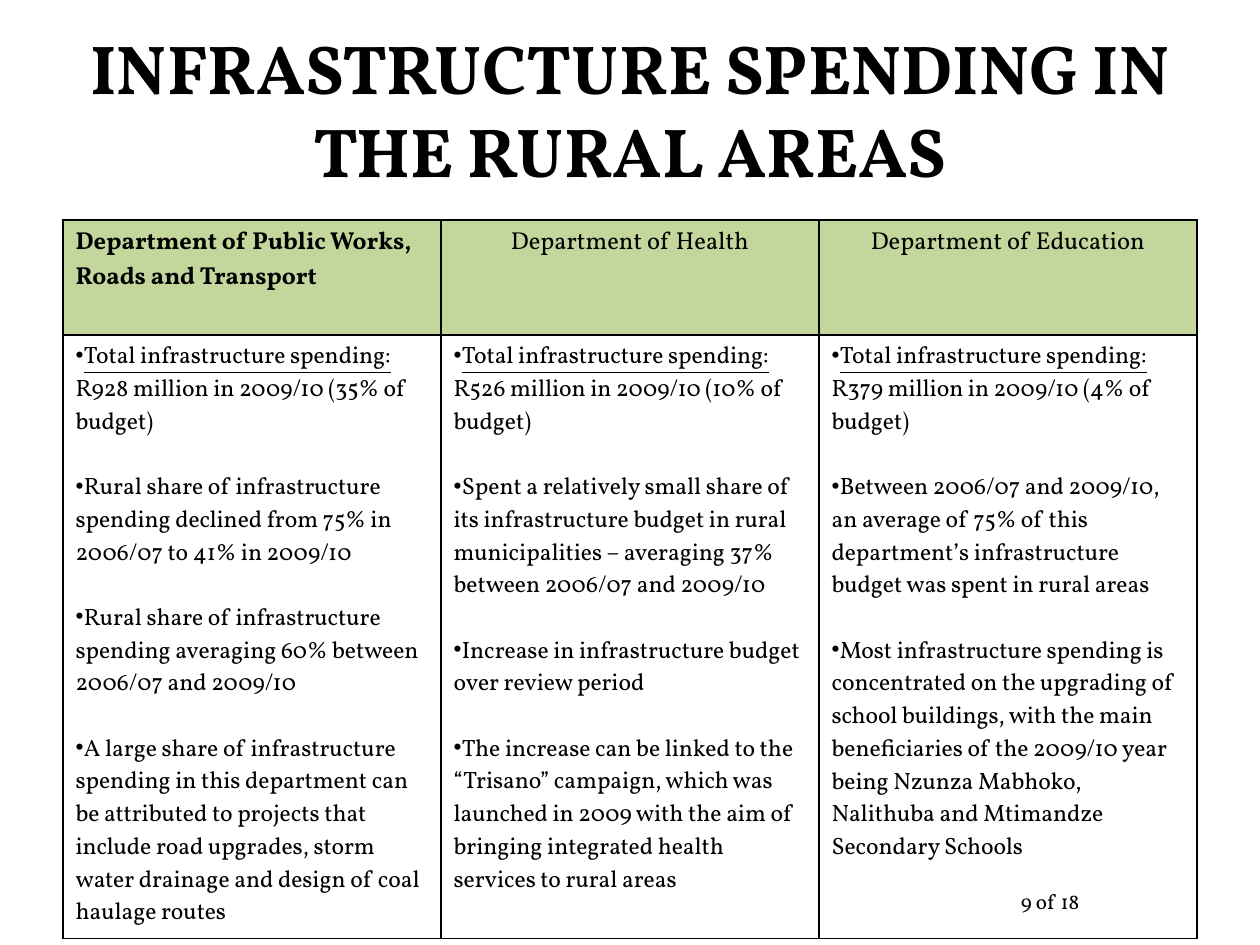
from collections import namedtuple

from lxml import etree
from pptx import Presentation, util as u
from pptx.dml.color import RGBColor
from pptx.enum import text
from pptx.oxml.ns import qn

COLOURS = {"ink": "000000", "header": "C3D69B"}
FONT = "Vollkorn"
BODY_SIZE = 13.5
PARA_GAP = 18.6
WIDTH, HEIGHT = u.Inches(10), u.Inches(7.5)
LEFT, CENTRE = text.PP_ALIGN.LEFT, text.PP_ALIGN.CENTER

Box = namedtuple("Box", "left top width height")

TITLE = "INFRASTRUCTURE SPENDING IN THE RURAL AREAS"
TOTAL = "Total infrastructure spending: "
DEPARTMENTS = [
    ("Department of Public Works, Roads and Transport",
     "R928 million in 2009/10 (35% of budget)",
     ["Rural share of infrastructure spending declined from 75% in 2006/07 "
      "to 41% in 2009/10",
      "Rural share of infrastructure spending averaging 60% between 2006/07 "
      "and 2009/10",
      "A large share of infrastructure spending in this department can be "
      "attributed to projects that include road upgrades, storm water "
      "drainage and design of coal haulage routes"]),
    ("Department of Health",
     "R526 million in 2009/10 (10% of budget)",
     ["Spent a relatively small share of its infrastructure budget in rural "
      "municipalities – averaging 37% between 2006/07 and 2009/10",
      "Increase in infrastructure budget over review period",
      "The increase can be linked to the “Trisano” campaign, which was "
      "launched in 2009 with the aim of bringing integrated health services "
      "to rural areas"]),
    ("Department of Education",
     "R379 million in 2009/10 (4% of budget)",
     ["Between 2006/07 and 2009/10, an average of 75% of this department’s "
      "infrastructure budget was spent in rural areas",
      "Most infrastructure spending is concentrated on the upgrading of "
      "school buildings, with the main beneficiaries of the 2009/10 year "
      "being Nzunza Mabhoko, Nalithuba and Mtimandze Secondary Schools"]),
]


def share(left, top, width, height):
    """Turn shares of the slide into a box of lengths."""
    return Box(int(left * WIDTH), int(top * HEIGHT),
               int(width * WIDTH), int(height * HEIGHT))


def write(para, words, size=BODY_SIZE, bold=False, underline=False, align=LEFT):
    para.alignment = align
    span = para.add_run()
    span.text = words
    font = span.font
    font.name, font.size = FONT, u.Pt(size)
    font.bold, font.underline = bold, underline
    font.color.rgb = RGBColor.from_string(COLOURS["ink"])


def add_bullet(para):
    props = para._p.get_or_add_pPr()
    props.set("marL", "0")
    props.set("indent", "0")
    etree.SubElement(props, qn("a:buChar"), char="•")


def add_label(page, box, words, **style):
    label = page.shapes.add_textbox(*box)
    frame = label.text_frame
    frame.word_wrap = True
    frame.vertical_anchor = text.MSO_ANCHOR.MIDDLE
    write(frame.paragraphs[0], words, align=CENTRE, **style)


def style_cell(cell, fill=None):
    """Outline the cell on all sides, then fill it or leave it clear."""
    props = cell._tc.get_or_add_tcPr()
    for side in ("a:lnL", "a:lnR", "a:lnT", "a:lnB"):
        line = etree.SubElement(props, qn(side), w=str(u.Pt(1)))
        solid = etree.SubElement(line, qn("a:solidFill"))
        etree.SubElement(solid, qn("a:srgbClr"), val=COLOURS["ink"])
    if fill:
        cell.fill.solid()
        cell.fill.fore_color.rgb = RGBColor.from_string(COLOURS[fill])
    else:
        cell.fill.background()


def fill_points(cell, amount, points):
    frame = cell.text_frame
    first = frame.paragraphs[0]
    add_bullet(first)
    write(first, TOTAL, underline=True)
    write(first, amount)
    for point in points:
        para = frame.add_paragraph()
        para.space_before = u.Pt(PARA_GAP)
        add_bullet(para)
        write(para, point)


def add_departments(page, box, header_share):
    table = page.shapes.add_table(2, len(DEPARTMENTS), *box).table
    table.horz_banding = False
    table.rows[0].height = int(box.height * header_share)
    table.rows[1].height = box.height - table.rows[0].height
    for column, (name, amount, points) in enumerate(DEPARTMENTS):
        header, body = table.cell(0, column), table.cell(1, column)
        style_cell(header, "header")
        style_cell(body)
        lead = column == 0
        write(header.text_frame.paragraphs[0], name, size=14, bold=lead,
              align=LEFT if lead else CENTRE)
        fill_points(body, amount, points)


def main():
    deck = Presentation()
    deck.slide_width, deck.slide_height = WIDTH, HEIGHT
    page = deck.slides.add_slide(deck.slide_layouts[6])
    add_label(page, share(0.05, 0.04, 0.9, 0.15), TITLE, size=39.6, bold=True)
    add_departments(page, share(0.05, 0.233, 0.9, 0.76), header_share=0.16)
    add_label(page, share(0.717, 0.927, 0.233, 0.053), "9 of 18", size=12)
    deck.save("out.pptx")


if __name__ == "__main__":
    main()
